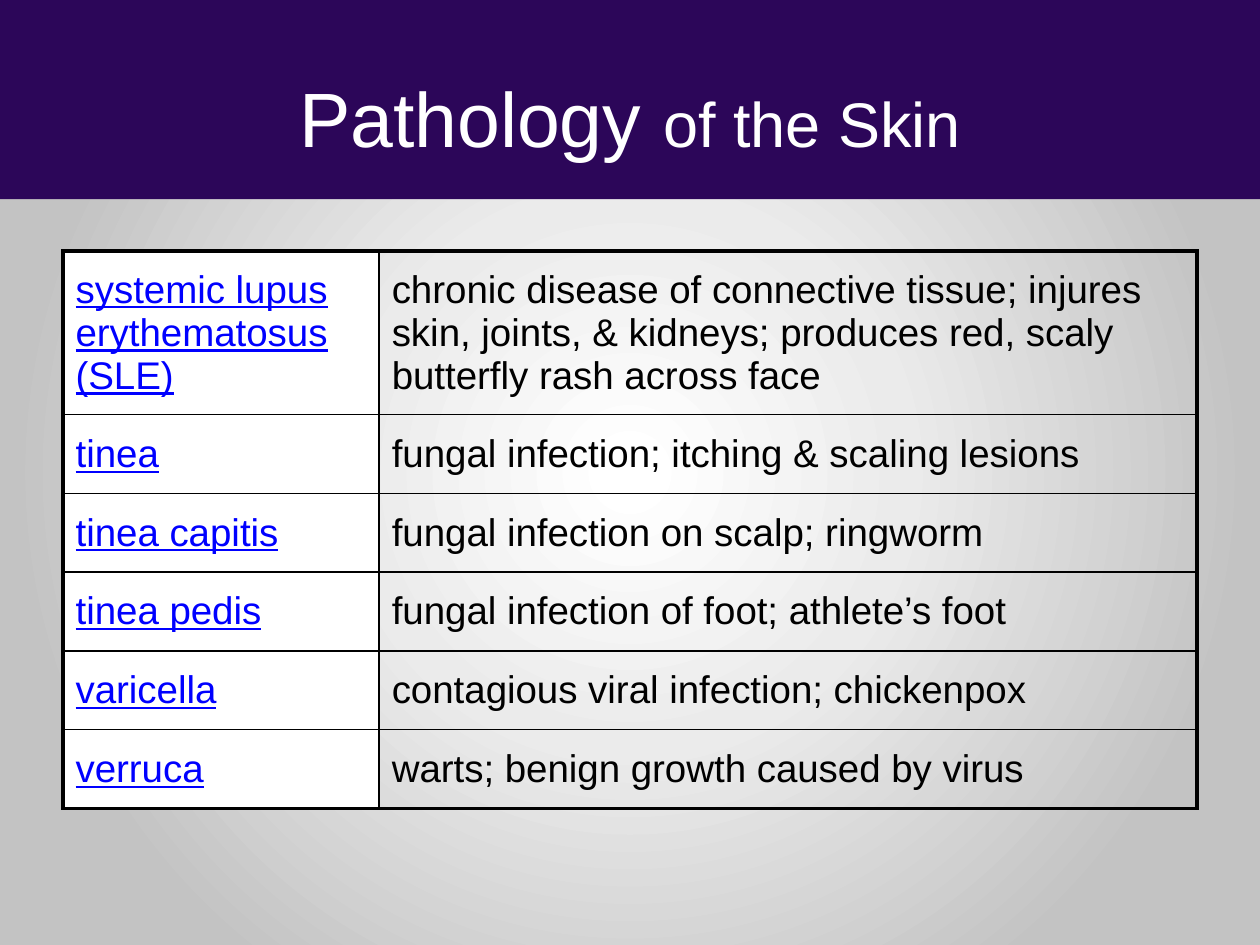
import pptx
import pptx.dml.color
import pptx.enum.shapes
import pptx.enum.text
import pptx.oxml
import pptx.oxml.ns
import pptx.util
from lxml import etree

Pt = pptx.util.Pt
COLORS = {
    "band": "2C0659",
    "white": "FFFFFF",
    "black": "000000",
    "term": "0000FF",
    "mid": "EBEBEB",
    "edge": "C3C3C3",
}
TERMS = [
    ("systemic lupus erythematosus (SLE)",
     "chronic disease of connective tissue; injures skin, joints, & kidneys; "
     "produces red, scaly butterfly rash across face"),
    ("tinea", "fungal infection; itching & scaling lesions"),
    ("tinea capitis", "fungal infection on scalp; ringworm"),
    ("tinea pedis", "fungal infection of foot; athlete’s foot"),
    ("varicella", "contagious viral infection; chickenpox"),
    ("verruca", "warts; benign growth caused by virus"),
]


def tint(name):
    return pptx.dml.color.RGBColor.from_string(COLORS[name])


def add(parent, tag, **attrs):
    """Append a drawing element with the given attributes."""
    node = etree.SubElement(parent, pptx.oxml.ns.qn(tag))
    for key, value in attrs.items():
        node.set(key, str(value))
    return node


class Deck:
    face = "Arial"
    thick, thin = 2.25, 1

    def __init__(self, wide, high):
        self.prs = pptx.Presentation()
        self.prs.slide_width, self.prs.slide_height = Pt(wide), Pt(high)
        self.slide = self.prs.slides.add_slide(self.prs.slide_layouts[5])

    def style(self, font, size, color):
        font.name, font.size = self.face, Pt(size)
        font.color.rgb = tint(color)

    def glow(self, stops):
        """Fill the background with a circular gradient from its centre."""
        fill = self.slide.background.fill
        fill.gradient()
        grad = self.slide.element.find(".//" + pptx.oxml.ns.qn("a:gradFill"))
        for node in list(grad):
            grad.remove(node)
        group = add(grad, "a:gsLst")
        for place, color in stops:
            stop = add(group, "a:gs", pos=place * 1000)
            add(stop, "a:srgbClr", val=COLORS[color])
        shade = add(grad, "a:path", path="circle")
        add(shade, "a:fillToRect", l=50000, t=50000, r=50000, b=50000)

    def band(self, x, y, w, h, color):
        """Draw a plain bar behind everything else."""
        kind = pptx.enum.shapes.MSO_SHAPE.RECTANGLE
        tree = self.slide.shapes
        bar = tree.add_shape(kind, Pt(x), Pt(y), Pt(w), Pt(h))
        bar.shadow.inherit = False
        bar.fill.solid()
        bar.fill.fore_color.rgb = tint(color)
        bar.line.fill.background()
        tree.element.insert(2, bar.element)

    def title(self, x, y, w, h, parts):
        box = self.slide.shapes.title
        box.left, box.top, box.width, box.height = Pt(x), Pt(y), Pt(w), Pt(h)
        box.text_frame.vertical_anchor = pptx.enum.text.MSO_ANCHOR.MIDDLE
        para = box.text_frame.paragraphs[0]
        para.alignment = pptx.enum.text.PP_ALIGN.CENTER
        for text, size in parts:
            run = para.add_run()
            run.text = text
            self.style(run.font, size, "white")

    def edges(self, cell, outer):
        """Rule all four sides, thick on the outer ones."""
        props = cell._tc.get_or_add_tcPr()
        for side in "LRTB":
            width = self.thick if side in outer else self.thin
            line = add(props, "a:ln" + side, w=int(Pt(width)))
            add(add(line, "a:solidFill"), "a:srgbClr", val=COLORS["black"])

    def cell(self, cell, text, outer, term):
        self.edges(cell, outer)
        if term:
            cell.fill.solid()
            cell.fill.fore_color.rgb = tint("white")
        else:
            cell.fill.background()
        cell.vertical_anchor = pptx.enum.text.MSO_ANCHOR.MIDDLE
        cell.text = text
        para = cell.text_frame.paragraphs[0]
        para.space_before = Pt(4.4)
        self.style(para.font, 22, "term" if term else "black")
        para.font.underline = term

    def table(self, x, y, cols, rows, data):
        frame = self.slide.shapes.add_table(
            len(rows), len(cols), Pt(x), Pt(y), Pt(sum(cols)), Pt(sum(rows)))
        grid = frame.table
        grid.first_row = grid.horz_banding = False
        for col, width in zip(grid.columns, cols):
            col.width = Pt(width)
        for row, height in zip(grid.rows, rows):
            row.height = Pt(height)
        for r, texts in enumerate(data):
            ends = ("T" if r == 0 else "") + ("B" if r == len(data) - 1 else "")
            for c, text in enumerate(texts):
                self.cell(grid.cell(r, c), text, ends + "LR"[c], c == 0)


def main():
    deck = Deck(720, 540)
    deck.glow([(2, "white"), (35, "mid"), (79, "edge")])
    deck.band(0, 0, 720, 113.75, "band")
    deck.title(36, 21.6, 648, 90, [("Pathology ", 44), ("of the Skin", 36)])
    deck.table(36, 143.5, [180.7, 467.3], [93.5] + [45] * 5, TERMS)
    deck.prs.save("out.pptx")


if __name__ == "__main__":
    main()
